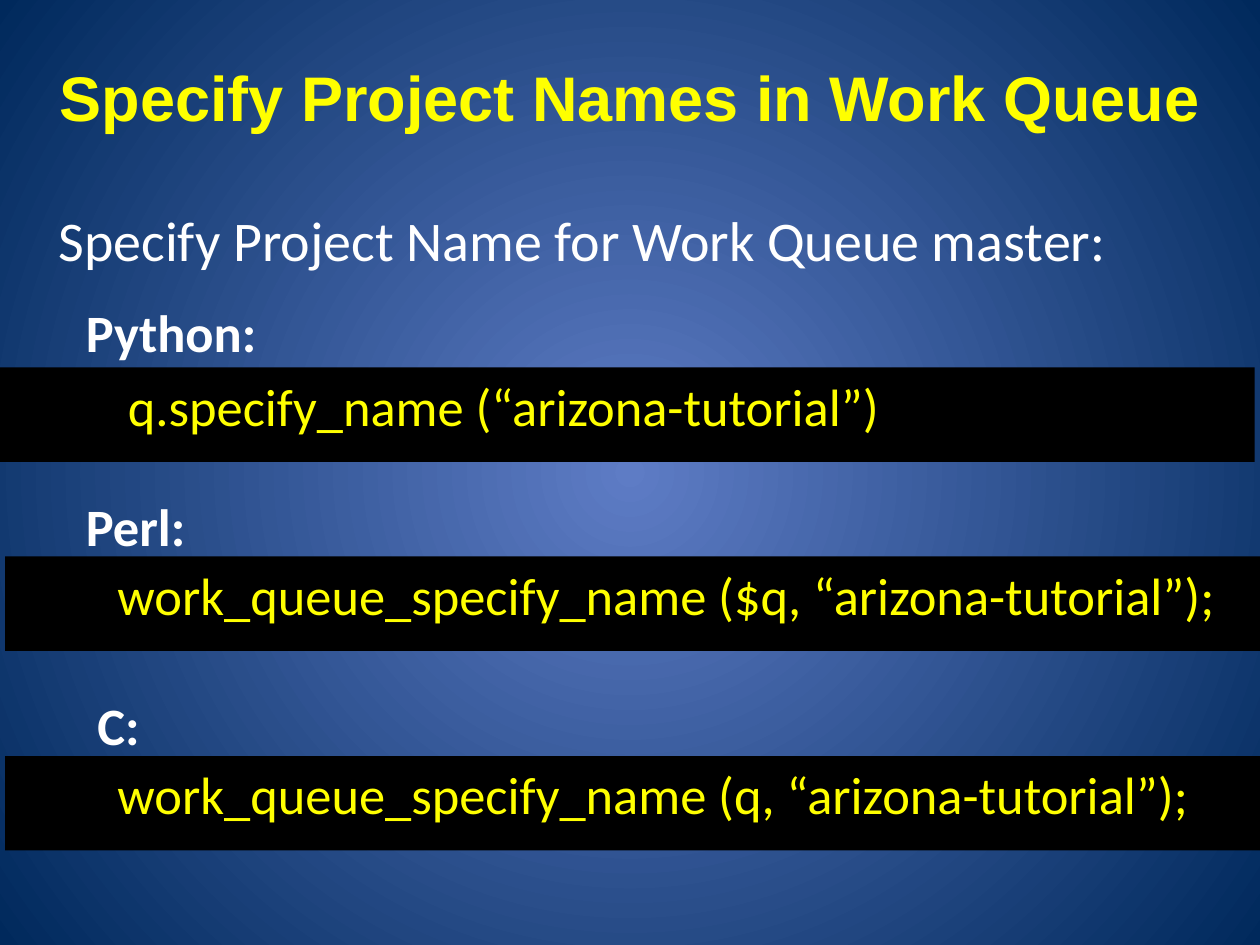
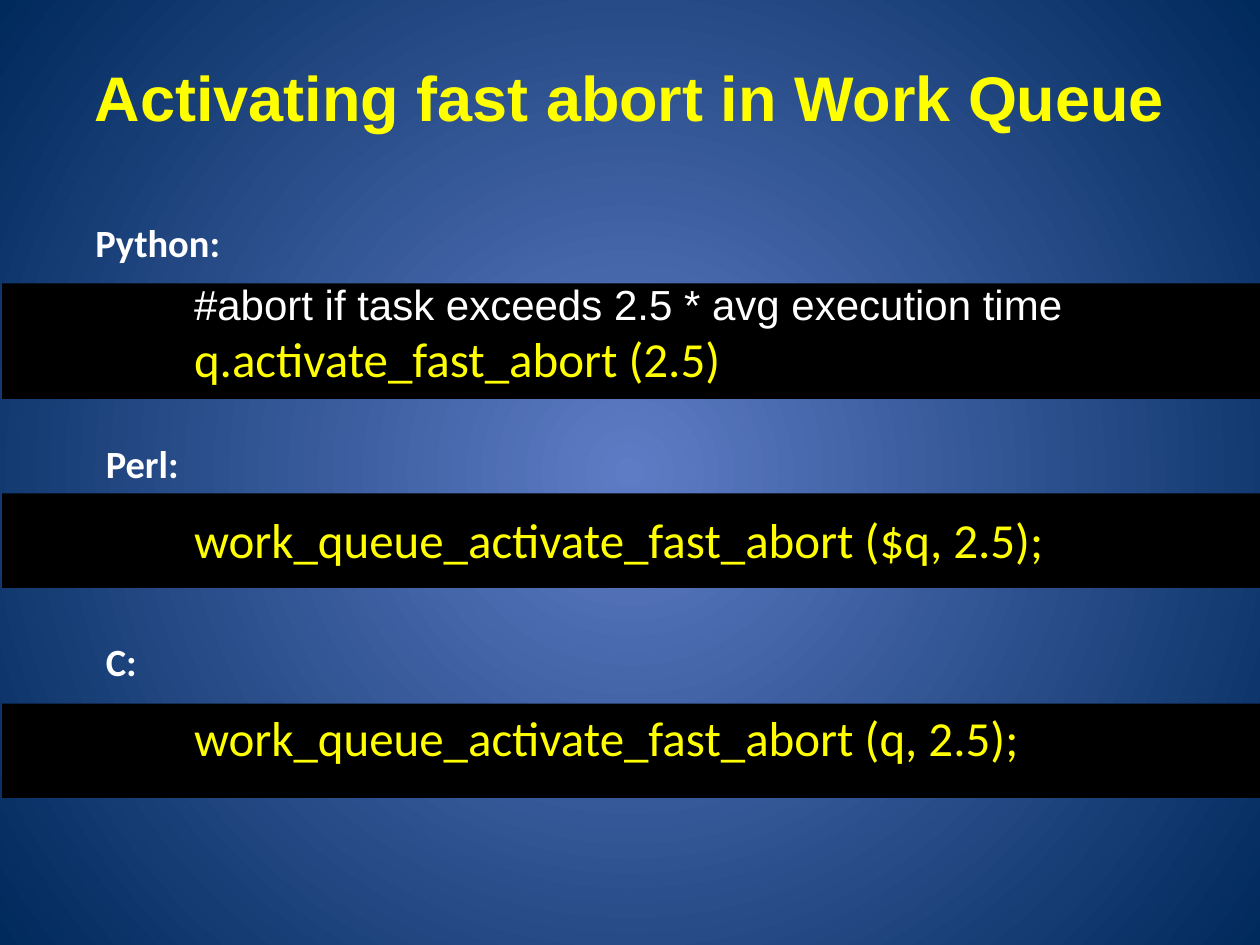
from lxml import etree
from pptx import Presentation
from pptx.dml.color import RGBColor
from pptx.enum.shapes import MSO_SHAPE
from pptx.enum.text import MSO_ANCHOR, PP_ALIGN
from pptx.oxml.ns import qn
from pptx.util import Inches, Pt

RECTANGLE = MSO_SHAPE.RECTANGLE
TOP = MSO_ANCHOR.TOP
LEFT = PP_ALIGN.LEFT
CENTER = PP_ALIGN.CENTER

COLUMNS, ROWS = 120, 90
YELLOW, WHITE, BLACK = "FFFF00", "FFFFFF", "000000"
GLOW, NAVY = "5E7CC5", "00295C"
HEADING_FONT, BODY_FONT = "Arial", "Calibri"


def color(value):
    return RGBColor.from_string(value)


class Deck:
    def __init__(self):
        self.presentation = Presentation()
        self.presentation.slide_width = Inches(10)
        self.presentation.slide_height = Inches(7.5)
        self.slide = None

    def area(self, left, top, width, height):
        column = self.presentation.slide_width / COLUMNS
        row = self.presentation.slide_height / ROWS
        return (round(left * column), round(top * row),
                round(width * column), round(height * row))

    def start_slide(self, title):
        layout = self.presentation.slide_layouts[6]
        self.slide = self.presentation.slides.add_slide(layout)
        self.paint_background()
        title_line = (title, 36, HEADING_FONT, YELLOW, True)
        self.text((0, 4.3, COLUMNS, 17.9), [title_line], CENTER, 0.11)

    def paint_background(self):
        fill = self.slide.background.fill
        fill.gradient()
        for stop, value in zip(fill.gradient_stops, (GLOW, NAVY)):
            stop.color.rgb = color(value)
        gradient = self.slide.element.find(".//" + qn("a:gradFill"))
        circle = etree.Element(qn("a:path"), {"path": "circle"})
        center = dict.fromkeys("ltrb", "50000")
        etree.SubElement(circle, qn("a:fillToRect"), center)
        gradient.replace(gradient.find(qn("a:lin")), circle)

    def text(self, place, lines, alignment=LEFT, top_margin=0.05):
        shape = self.slide.shapes.add_textbox(*self.area(*place))
        frame = shape.text_frame
        frame.word_wrap = True
        frame.vertical_anchor = TOP
        frame.margin_top = Inches(top_margin)
        for index, (words, size, font, tint, bold) in enumerate(lines):
            paragraph = frame.add_paragraph() if index else frame.paragraphs[0]
            paragraph.alignment = alignment
            run = paragraph.add_run()
            run.text = words
            run.font.size = Pt(size)
            run.font.name = font
            run.font.bold = bold
            run.font.color.rgb = color(tint)

    def band(self, left, top, width, height=9):
        place = self.area(left, top, width, height)
        shape = self.slide.shapes.add_shape(RECTANGLE, *place)
        shape.shadow.inherit = False
        shape.fill.solid()
        shape.fill.fore_color.rgb = color(BLACK)
        shape.line.fill.background()

    def label(self, left, top, words, size):
        self.text((left, top, 43, size * 0.24),
                  [(words, size, BODY_FONT, WHITE, True)])

    def code(self, left, top, words, size, height, comment=None):
        lines = [(words, size, BODY_FONT, YELLOW, False)]
        if comment:
            lines.insert(0, (comment, 24, HEADING_FONT, WHITE, False))
        self.text((left, top, COLUMNS - left, height), lines)


def project_names(deck):
    deck.start_slide("Specify Project Names in Work Queue")
    deck.text((4.4, 19, 113.5, 9.4),
              [("Specify Project Name for Work Queue master:",
                32, BODY_FONT, WHITE, False)])
    examples = [
        ("Python:", 7, 28, 0, 35, 11, "q.specify_name (“arizona-tutorial”)"),
        ("Perl:", 7, 46.5, 0.5, 53, 10,
         "work_queue_specify_name ($q, “arizona-tutorial”);"),
        ("C:", 8.1, 65.4, 0.5, 72, 10,
         "work_queue_specify_name (q, “arizona-tutorial”);"),
    ]
    for language, left, top, band_left, band_top, code_left, call in examples:
        deck.band(band_left, band_top, 119.5)
        deck.label(left, top, language, 30)
        deck.code(code_left, band_top, call, 30, 8)


def fast_abort(deck):
    deck.start_slide("Activating fast abort in Work Queue")
    examples = [
        ("Python:", 7.9, 20.3, 27, 11, 25.9, 17.2,
         "q.activate_fast_abort (2.5)",
         "#abort if task exceeds 2.5 * avg execution time"),
        ("Perl:", 8.9, 41.3, 47, 9, 47.9, 12.4,
         "work_queue_activate_fast_abort ($q, 2.5);", None),
        ("C:", 8.9, 60.2, 67, 9, 66.8, 18,
         "work_queue_activate_fast_abort (q, 2.5);", None),
    ]
    for (language, left, top, band_top, band_height,
         code_top, code_height, call, comment) in examples:
        deck.band(0.2, band_top, 119.8, band_height)
        deck.label(left, top, language, 22)
        deck.code(17.3, code_top, call, 28, code_height, comment)


def main():
    deck = Deck()
    project_names(deck)
    fast_abort(deck)
    deck.presentation.save("out.pptx")


if __name__ == "__main__":
    main()
